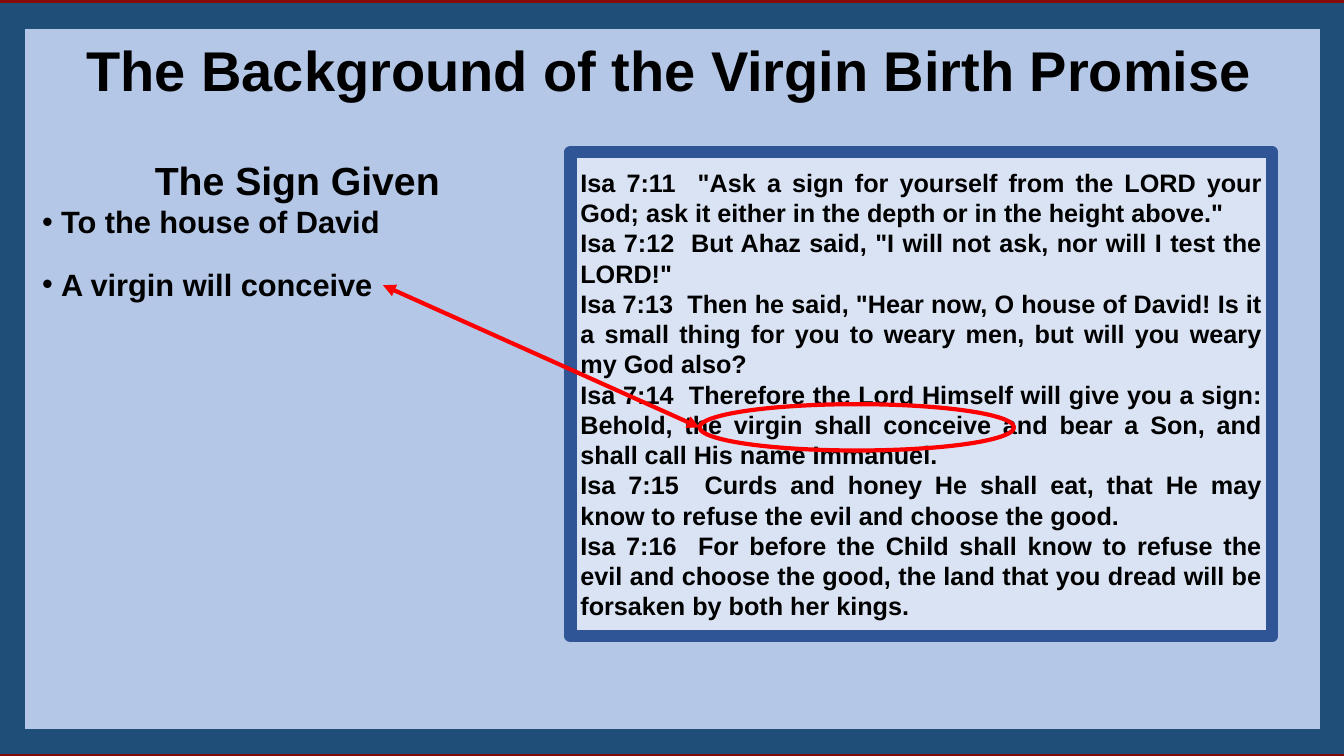
from dataclasses import dataclass

from lxml import etree
from pptx import Presentation
from pptx.dml.color import RGBColor
from pptx.enum.shapes import MSO_CONNECTOR, MSO_SHAPE
from pptx.enum.text import MSO_ANCHOR, MSO_AUTO_SIZE, PP_ALIGN
from pptx.oxml.ns import qn
from pptx.util import Pt

RECTANGLE, ELLIPSE = MSO_SHAPE.RECTANGLE, MSO_SHAPE.OVAL
STRAIGHT = MSO_CONNECTOR.STRAIGHT
LEFT, CENTER, JUSTIFY = PP_ALIGN.LEFT, PP_ALIGN.CENTER, PP_ALIGN.JUSTIFY
TOP, MIDDLE = MSO_ANCHOR.TOP, MSO_ANCHOR.MIDDLE
FIT_SHAPE = MSO_AUTO_SIZE.SHAPE_TO_FIT_TEXT

FONT = "Arial"
BULLET_INDENT = 13.5
COLORS = {
    "background": "860A0A",
    "frame_fill": "B4C7E7",
    "frame_line": "1F4E79",
    "scripture_fill": "DAE3F3",
    "scripture_line": "2F5597",
    "highlight": "FF0000",
    "text": "000000",
}


@dataclass(frozen=True)
class Box:
    left: float
    top: float
    width: float
    height: float

    def lengths(self) -> tuple:
        return Pt(self.left), Pt(self.top), Pt(self.width), Pt(self.height)


@dataclass(frozen=True)
class Panel:
    kind: int
    box: Box
    fill: str | None
    line: str
    weight: float
    join: str


FRAME = Panel(RECTANGLE, Box(8.64, 11.52, 943.2, 518.4), "frame_fill", "frame_line", 18, "miter")
SCRIPTURE = Panel(
    RECTANGLE, Box(407.52, 108.72, 501.12, 345.6), "scripture_fill", "scripture_line", 9, "round"
)
PHRASE_RING = Panel(ELLIPSE, Box(499.68, 288.72, 224.64, 33.12), None, "highlight", 3, "round")
SIGN_BOX = Box(23.04, 108, 378.72, 113.04)
TITLE_BOX = Box(18.72, 21.6, 918, 55.44)
ARROW_START = (273.6, 203.76)
ARROW_END = (499.68, 305.28)

SIGNS = ["To the house of David", "A virgin will conceive"]
VERSES = [
    'Isa 7:11  "Ask a sign for yourself from the LORD your God; '
    'ask it either in the depth or in the height above."',
    'Isa 7:12  But Ahaz said, "I will not ask, nor will I test the LORD!"',
    'Isa 7:13  Then he said, "Hear now, O house of David! Is it a small thing '
    'for you to weary men, but will you weary my God also?',
    "Isa 7:14  Therefore the Lord Himself will give you a sign: Behold, the virgin "
    "shall conceive and bear a Son, and shall call His name Immanuel.",
    "Isa 7:15  Curds and honey He shall eat, that He may know to refuse the evil "
    "and choose the good.",
    "Isa 7:16  For before the Child shall know to refuse the evil and choose the good, "
    "the land that you dread will be forsaken by both her kings.",
]


def color(name: str) -> RGBColor:
    return RGBColor.from_string(COLORS[name])


def write(frame, text: str, *, size: float, align=LEFT, after: float = 0, bullet: bool = False) -> None:
    first = frame.paragraphs[0]
    paragraph = frame.add_paragraph() if first.runs else first
    paragraph.alignment = align
    paragraph.space_before = Pt(0)
    paragraph.space_after = Pt(after)
    run = paragraph.add_run()
    run.text = text
    run.font.name = FONT
    run.font.size = Pt(size)
    run.font.bold = True
    run.font.color.rgb = color("text")
    if bullet:
        properties = paragraph._p.get_or_add_pPr()
        properties.set("marL", str(Pt(BULLET_INDENT)))
        properties.set("indent", str(-Pt(BULLET_INDENT)))
        bullet_color = etree.SubElement(properties, qn("a:buClr"))
        etree.SubElement(bullet_color, qn("a:srgbClr"), val=COLORS["text"])
        etree.SubElement(properties, qn("a:buFont"), typeface=FONT)
        etree.SubElement(properties, qn("a:buChar"), char="•")


def draw_panel(slide, panel: Panel):
    shape = slide.shapes.add_shape(panel.kind, *panel.box.lengths())
    shape.shadow.inherit = False
    if panel.fill:
        shape.fill.solid()
        shape.fill.fore_color.rgb = color(panel.fill)
    else:
        shape.fill.background()
    shape.line.color.rgb = color(panel.line)
    shape.line.width = Pt(panel.weight)
    etree.SubElement(shape.line._get_or_add_ln(), qn(f"a:{panel.join}"))
    return shape


def add_text_frame(slide, box: Box):
    frame = slide.shapes.add_textbox(*box.lengths()).text_frame
    frame.word_wrap = True
    frame.auto_size = FIT_SHAPE
    frame.vertical_anchor = TOP
    return frame


def draw_double_arrow(slide, start: tuple, end: tuple) -> None:
    arrow = slide.shapes.add_connector(STRAIGHT, *(Pt(value) for value in start + end))
    arrow.line.color.rgb = color("highlight")
    arrow.line.width = Pt(3)
    line = arrow.line._get_or_add_ln()
    for tip in ("a:headEnd", "a:tailEnd"):
        etree.SubElement(line, qn(tip), type="triangle")
    etree.SubElement(arrow._element.spPr, qn("a:effectLst"))


def main() -> None:
    deck = Presentation()
    deck.slide_width, deck.slide_height = Pt(960), Pt(540)
    slide = deck.slides.add_slide(deck.slide_layouts[6])
    slide.background.fill.solid()
    slide.background.fill.fore_color.rgb = color("background")

    draw_panel(slide, FRAME)
    scripture = draw_panel(slide, SCRIPTURE).text_frame
    scripture.word_wrap = True
    scripture.vertical_anchor = MIDDLE
    for verse in VERSES:
        write(scripture, verse, size=18, align=JUSTIFY)

    sign = add_text_frame(slide, SIGN_BOX)
    write(sign, "The Sign Given", size=28, align=CENTER)
    for item in SIGNS:
        write(sign, item, size=22, after=18, bullet=True)

    title = add_text_frame(slide, TITLE_BOX)
    write(title, "The Background of the Virgin Birth Promise", size=40, align=CENTER, after=5)

    draw_double_arrow(slide, ARROW_START, ARROW_END)
    draw_panel(slide, PHRASE_RING)
    deck.save("out.pptx")


if __name__ == "__main__":
    main()
